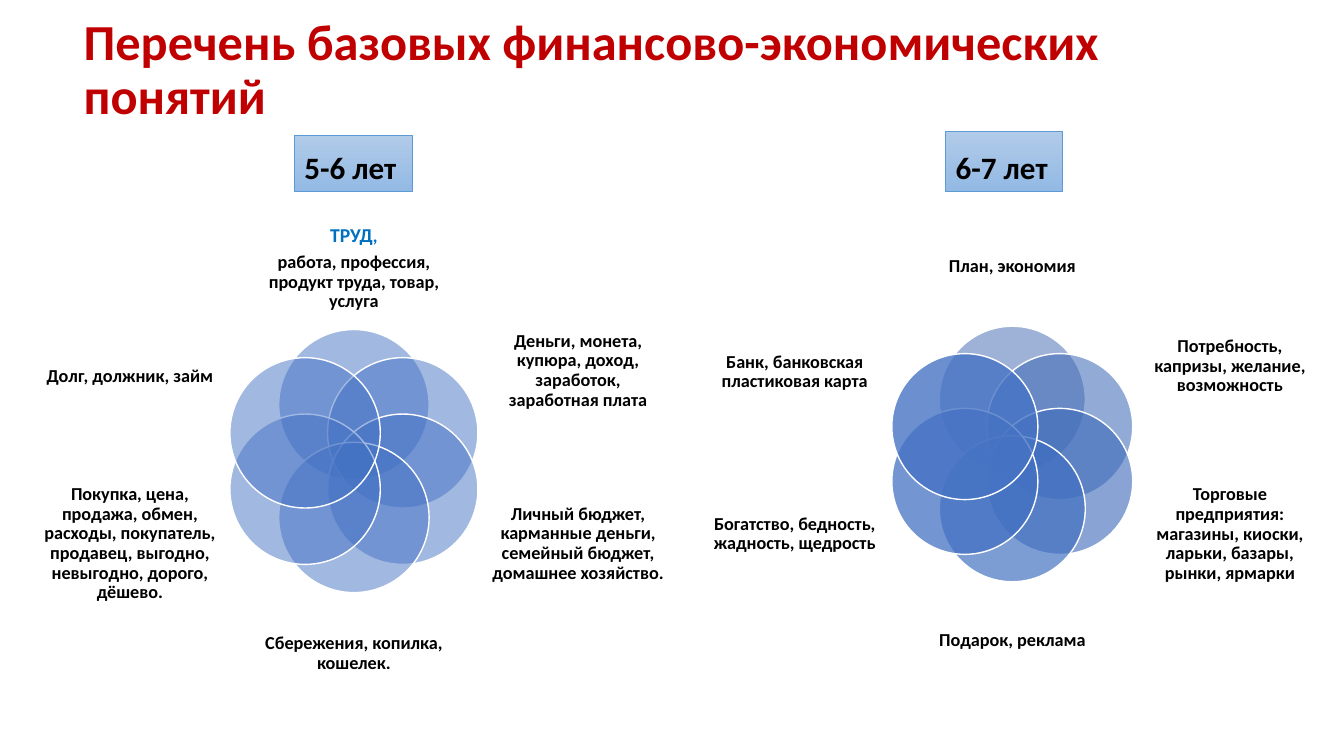
import math
from pptx import Presentation
from pptx import util as u
from pptx.dml import color
from pptx.enum import shapes, text
from pptx.oxml import ns
from lxml import etree

FONT = "Calibri"
ZERO_INSETS = {"margin_left": 0, "margin_top": 0, "margin_right": 0, "margin_bottom": 0}
LABEL_FRAME = {"word_wrap": True, "vertical_anchor": text.MSO_ANCHOR.MIDDLE, **ZERO_INSETS}
LABEL_PARAGRAPH = {"alignment": text.PP_ALIGN.CENTER, "line_spacing": 0.9, "space_after": u.Pt(4.55)}
LEFT_PARAGRAPH = {"alignment": text.PP_ALIGN.LEFT, "line_spacing": 0.9}

DIAMETERS_ACROSS = 4.17
CENTER_DOWN = 1.625
PETAL_RADIUS = 0.375
LABEL_BOXES = [
    (0, -1.28, 1.25, 0.68),
    (1.49, -0.6, 1.19, 0.75),
    (1.49, 0.55, 1.19, 0.83),
    (0, 1.28, 1.25, 0.68),
    (-1.49, 0.55, 1.19, 0.83),
    (-1.49, -0.56, 1.19, 0.83),
]

YOUNGER = {
    "age": "5-6 лет",
    "age_box": (2.92, 1.34, 1.17, 0.56),
    "flower_box": (0.4, 2.15, 6.22),
    "petals": [("4472C4", 50)] * 6,
    "labels": [
        [[("ТРУД", 14, "0070C0"), (",", 13, "0070C0")],
         [("работа, профессия, продукт труда, товар, услуга", 13, "000000")]],
        "Деньги, монета, купюра, доход, заработок, заработная плата",
        "Личный бюджет, карманные деньги, семейный бюджет, домашнее хозяйство.",
        "Сбережения, копилка, кошелек.",
        "Покупка, цена, продажа, обмен, расходы, покупатель, продавец, выгодно, "
        "невыгодно, дорого, дёшево.",
        "Долг, должник, займ",
    ],
}
OLDER = {
    "age": "6-7 лет",
    "age_box": (9.38, 1.3, 1.16, 0.6),
    "flower_box": (7.02, 2.15, 6.04),
    "petals": [("3E67B2", 50), ("3E69B6", 56), ("3F6CBB", 62),
               ("3F6EC0", 68), ("4370C2", 74), ("4673C4", 80)],
    "labels": [
        "План, экономия",
        "Потребность, капризы, желание, возможность",
        "Торговые предприятия: магазины, киоски, ларьки, базары, рынки, ярмарки",
        "Подарок, реклама",
        "Богатство, бедность, жадность, щедрость",
        "Банк, банковская пластиковая карта",
    ],
}


def rgb(value):
    return color.RGBColor.from_string(value)


def apply(target, values):
    for name, value in values.items():
        setattr(target, name, value)


def inches(box):
    return [u.Inches(length) for length in box]


def centered(x, y, width, height):
    return inches((x - width / 2, y - height / 2, width, height))


def write(frame, paragraphs, frame_format, paragraph_format):
    apply(frame, frame_format)
    for index, runs in enumerate(paragraphs):
        paragraph = frame.paragraphs[0] if index == 0 else frame.add_paragraph()
        apply(paragraph, paragraph_format)
        for words, size, tint in runs:
            run = paragraph.add_run()
            run.text = words
            apply(run.font, {"name": FONT, "size": u.Pt(size), "bold": True})
            run.font.color.rgb = rgb(tint)


def outline(shape, tint, width):
    shape.shadow.inherit = False
    shape.line.color.rgb = rgb(tint)
    shape.line.width = u.Pt(width)


def add_title(slide, box, words):
    title = slide.shapes.title
    apply(title, dict(zip(("left", "top", "width", "height"), inches(box))))
    frame_format = {"word_wrap": True, "auto_size": text.MSO_AUTO_SIZE.NONE,
                    "vertical_anchor": text.MSO_ANCHOR.MIDDLE}
    write(title.text_frame, [[(words, 36, "C00000")]], frame_format, LEFT_PARAGRAPH)


def add_age(slide, box, words):
    shape = slide.shapes.add_shape(shapes.MSO_SHAPE.RECTANGLE, *inches(box))
    outline(shape, "5B9BD5", 0.5)
    shape.fill.gradient()
    shape.fill.gradient_angle = 270
    for stop, tint in zip(shape.fill.gradient_stops, ("B1CBE9", "93B9E4")):
        stop.color.rgb = rgb(tint)
    frame_format = {"word_wrap": True, "vertical_anchor": text.MSO_ANCHOR.BOTTOM}
    write(shape.text_frame, [[(words, 22.2, "000000")]], frame_format, LEFT_PARAGRAPH)


def add_petal(group, box, tint, opacity):
    petal = group.shapes.add_shape(shapes.MSO_SHAPE.OVAL, *box)
    outline(petal, "FFFFFF", 1)
    petal.fill.solid()
    petal.fill.fore_color.rgb = rgb(tint)
    solid = petal.fill._xPr.find(ns.qn("a:solidFill"))
    etree.SubElement(solid[0], ns.qn("a:alpha"), val=str(opacity * 1000))


def add_flower(slide, box, petals, labels):
    left, top, width = box
    diameter = width / DIAMETERS_ACROSS
    center_x = left + width / 2
    center_y = top + CENTER_DOWN * diameter
    radius = PETAL_RADIUS * diameter
    group = slide.shapes.add_group_shape()
    for index, ((tint, opacity), label, shares) in enumerate(zip(petals, labels, LABEL_BOXES)):
        angle = math.radians(60 * index)
        petal_box = centered(center_x + radius * math.sin(angle),
                             center_y - radius * math.cos(angle), diameter, diameter)
        add_petal(group, petal_box, tint, opacity)

        x, y, label_width, label_height = (share * diameter for share in shares)
        label_box = centered(center_x + x, center_y + y, label_width, label_height)
        paragraphs = [[(label, 13, "000000")]] if isinstance(label, str) else label
        write(group.shapes.add_textbox(*label_box).text_frame, paragraphs,
              LABEL_FRAME, LABEL_PARAGRAPH)


def main():
    presentation = Presentation()
    presentation.slide_width = u.Inches(13.33)
    presentation.slide_height = u.Inches(7.5)
    slide = presentation.slides.add_slide(presentation.slide_layouts[5])
    add_title(slide, (0.73, 0.38, 11.81, 0.65),
              "Перечень базовых финансово-экономических понятий")
    for group in (YOUNGER, OLDER):
        add_age(slide, group["age_box"], group["age"])
        add_flower(slide, group["flower_box"], group["petals"], group["labels"])
    presentation.save("out.pptx")


if __name__ == "__main__":
    main()
